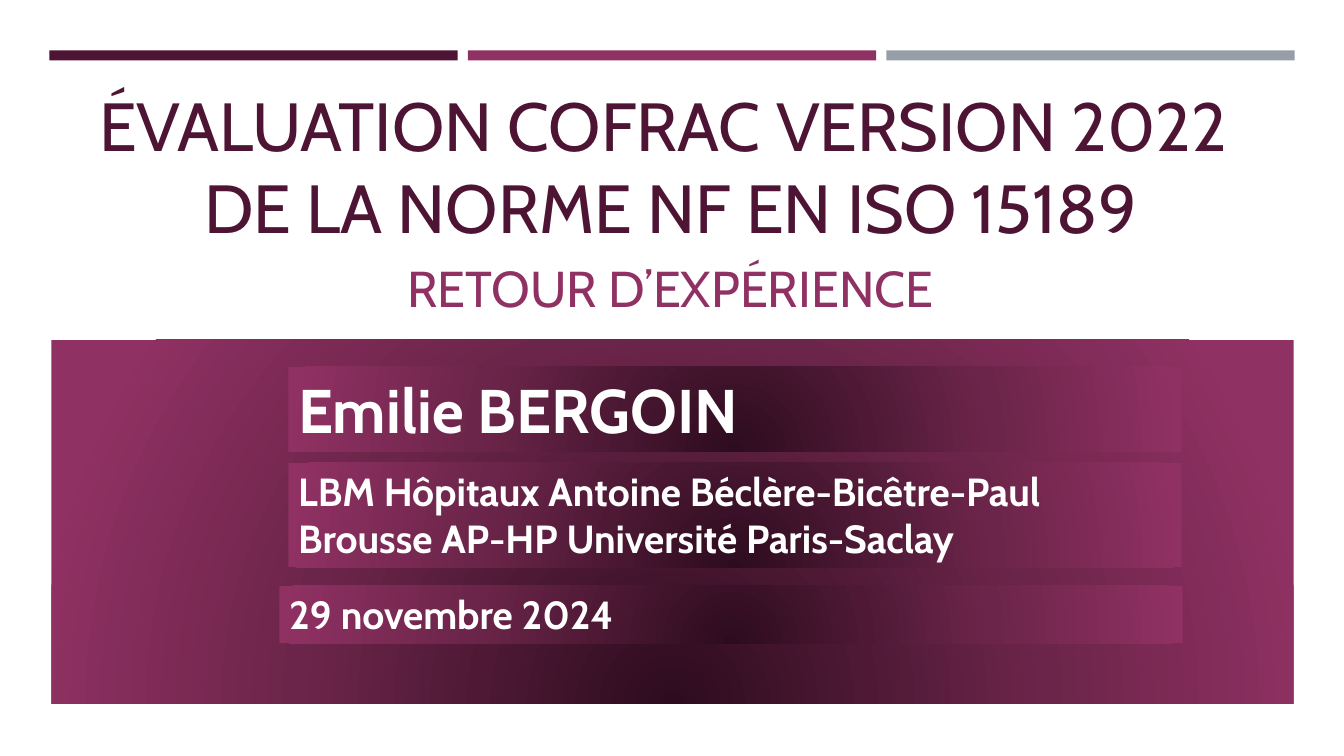
from pptx import Presentation, oxml
from pptx import util as u
from pptx.dml.color import RGBColor
from pptx.enum import shapes, text
from pptx.oxml import ns

PLUM, PINK, GREY, WHITE = "4D1434", "903163", "969FA7", "FFFFFF"
GLOW = [(0, "2E0C1F"), (58, "6C254A"), (100, PINK)]

deck = Presentation()
deck.slide_width, deck.slide_height = u.Inches(13.33), u.Inches(7.5)
slide = deck.slides.add_slide(deck.slide_layouts[6])


def add_box(place, fill=None):
    """Add a rectangle: one flat colour, or the radial glow if none is given."""
    box = slide.shapes.add_shape(
        shapes.MSO_SHAPE.RECTANGLE, *[u.Inches(n) for n in place])
    box.shadow.inherit = False
    box.line.fill.background()
    box.fill.solid()
    if fill:
        box.fill.fore_color.rgb = RGBColor.from_string(fill)
        return box
    stops = "".join(
        f'<a:gs pos="{pos * 1000}"><a:srgbClr val="{tone}"/></a:gs>'
        for pos, tone in GLOW)
    glow = oxml.parse_xml(
        f'<a:gradFill {ns.nsdecls("a")} rotWithShape="1"><a:gsLst>{stops}</a:gsLst>'
        '<a:path path="circle">'
        '<a:fillToRect l="50000" t="130000" r="50000" b="-30000"/>'
        '</a:path></a:gradFill>')
    props = box._element.spPr
    props.replace(props.find(ns.qn("a:solidFill")), glow)
    return box


def write(box, lines, size, tone, align, anchor, bold=False):
    frame = box.text_frame
    frame.word_wrap = True
    frame.vertical_anchor = anchor
    para = frame.paragraphs[0]
    para.alignment = align
    for i, line in enumerate(lines):
        if i:
            para.add_line_break()
        run = para.add_run()
        run.text = line
        run.font.name = "Cabin"
        run.font.size = u.Pt(size)
        run.font.bold = bold
        run.font.color.rgb = RGBColor.from_string(tone)


# Top bars and main panel
for i, tone in enumerate([PLUM, PINK, GREY]):
    add_box((0.49 + 4.15 * i, 0.5, 4.05, 0.1), tone)
add_box((0.51, 3.37, 12.32, 3.61))

# Title and subtitle
heads = [
    (0.81, 1.66, ["ÉVALUATION COFRAC VERSION 2022 ", "DE LA NORME NF EN ISO 15189"],
     48.6, PLUM, text.MSO_ANCHOR.MIDDLE),
    (2.5, 0.65, ["RETOUR D’EXPÉRIENCE"], 36, PINK, text.MSO_ANCHOR.TOP),
]
for top, height, lines, size, tone, anchor in heads:
    box = slide.shapes.add_textbox(
        *[u.Inches(n) for n in (0.64, top, 12.02, height)])
    write(box, lines, size, tone, text.PP_ALIGN.CENTER, anchor)

# Speaker, workplace and date
cards = [
    ((2.86, 3.64, 8.86, 0.84), "Emilie BERGOIN", 44),
    ((2.86, 4.59, 8.86, 1.04),
     "LBM Hôpitaux Antoine Béclère-Bicêtre-Paul Brousse AP-HP Université Paris-Saclay", 28),
    ((2.77, 5.81, 8.96, 0.57), "29 novembre 2024", 28),
]
for place, words, size in cards:
    write(add_box(place), [words], size, WHITE,
          text.PP_ALIGN.LEFT, text.MSO_ANCHOR.TOP, bold=True)

deck.save("out.pptx")
